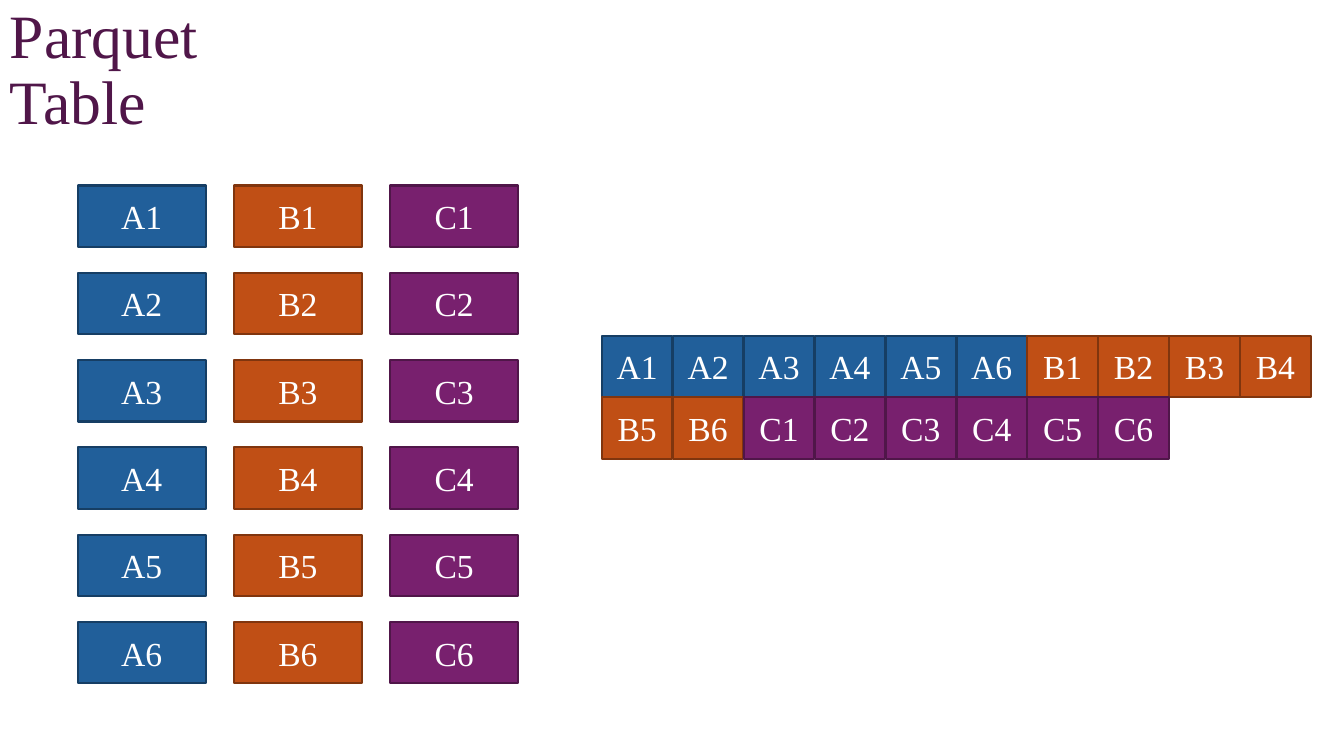
from pptx import Presentation
from pptx.dml.color import RGBColor
from pptx.enum.shapes import MSO_SHAPE
from pptx.enum.text import MSO_ANCHOR, PP_ALIGN
from pptx.util import Inches, Pt

COLORS = {
    "title": "501649",
    "text": "FFFFFF",
    "A": "215F9A", "A line": "163E64",
    "B": "C04F15", "B line": "80350E",
    "C": "78206E", "C line": "501649",
}


class Board:
    font = "Times New Roman"

    def __init__(self, slide):
        self.slide = slide

    def color(self, name):
        return RGBColor.from_string(COLORS[name])

    def label(self, para, text, size, color):
        run = para.add_run()
        run.text = text
        run.font.name = self.font
        run.font.size = Pt(size)
        run.font.color.rgb = self.color(color)

    def title(self, text, left, top, width, height):
        box = self.slide.shapes.add_textbox(
            Inches(left), Inches(top), Inches(width), Inches(height))
        box.text_frame.word_wrap = True
        para = box.text_frame.paragraphs[0]
        para.line_spacing = 0.9
        self.label(para, text, 44, "title")

    def cell(self, text, left, top, width, height=0.61):
        box = self.slide.shapes.add_shape(
            MSO_SHAPE.RECTANGLE,
            Inches(left), Inches(top), Inches(width), Inches(height))
        box.shadow.inherit = False
        box.fill.solid()
        box.fill.fore_color.rgb = self.color(text[0])
        box.line.color.rgb = self.color(text[0] + " line")
        box.line.width = Pt(1.5)
        frame = box.text_frame
        frame.word_wrap = True
        frame.vertical_anchor = MSO_ANCHOR.MIDDLE
        para = frame.paragraphs[0]
        para.alignment = PP_ALIGN.CENTER
        self.label(para, text, 24, "text")


def main():
    deck = Presentation()
    deck.slide_width = Inches(13.33)
    deck.slide_height = Inches(7.5)
    board = Board(deck.slides.add_slide(deck.slide_layouts[6]))

    board.title("Parquet Table", 0, 0, 3, 1.4)

    columns = "ABC"
    rows = range(6)
    for row in rows:
        for col, letter in enumerate(columns):
            board.cell(f"{letter}{row + 1}",
                       0.77 + col * 1.55, 1.84 + row * 4.33 / 5, 1.27)

    stored = [f"{letter}{row + 1}" for letter in columns for row in rows]
    for index, name in enumerate(stored):
        line, place = divmod(index, 10)
        board.cell(name, 5.97 + place * 6.33 / 9, 3.33 + line * 0.61, 0.7)

    deck.save("out.pptx")


if __name__ == "__main__":
    main()
